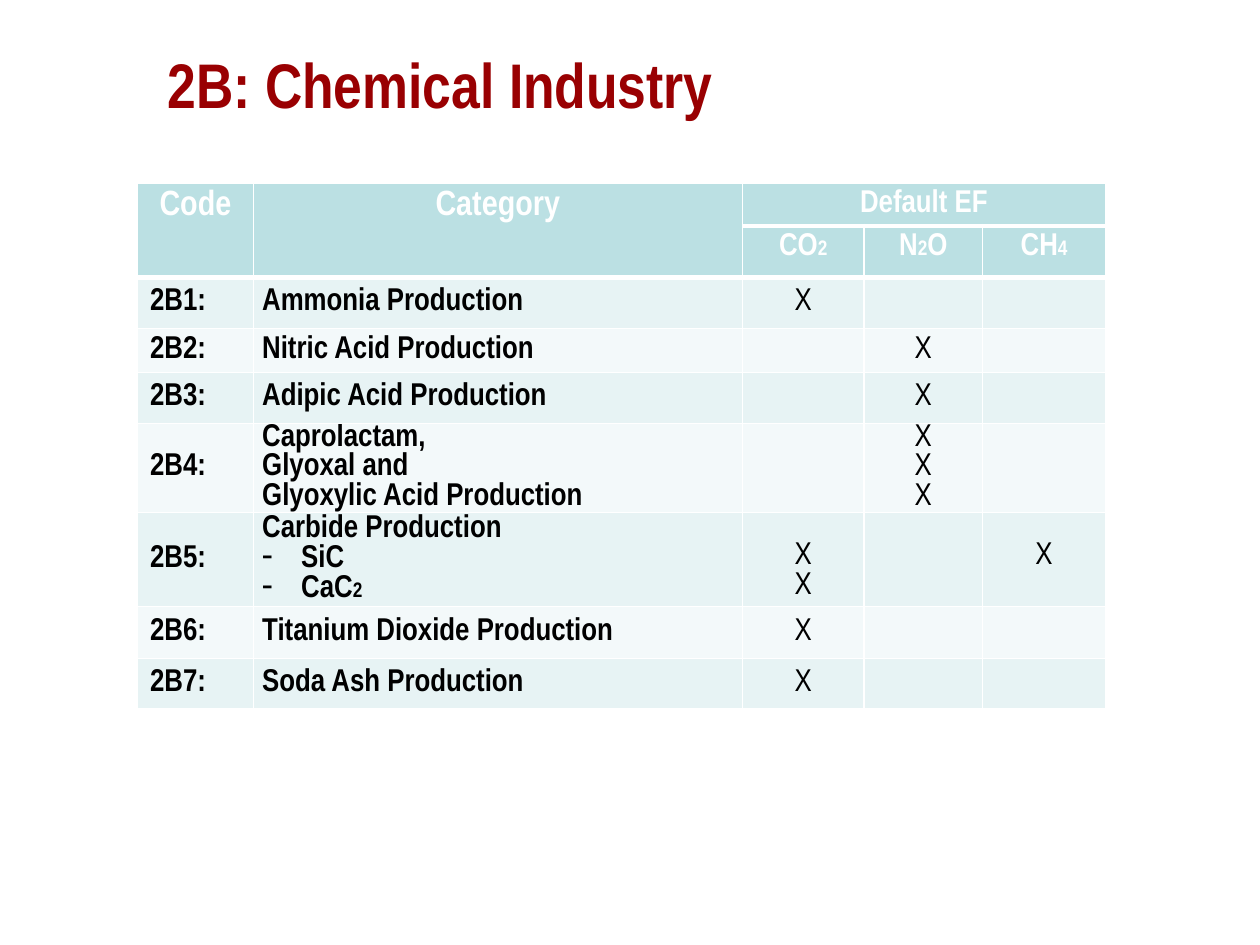
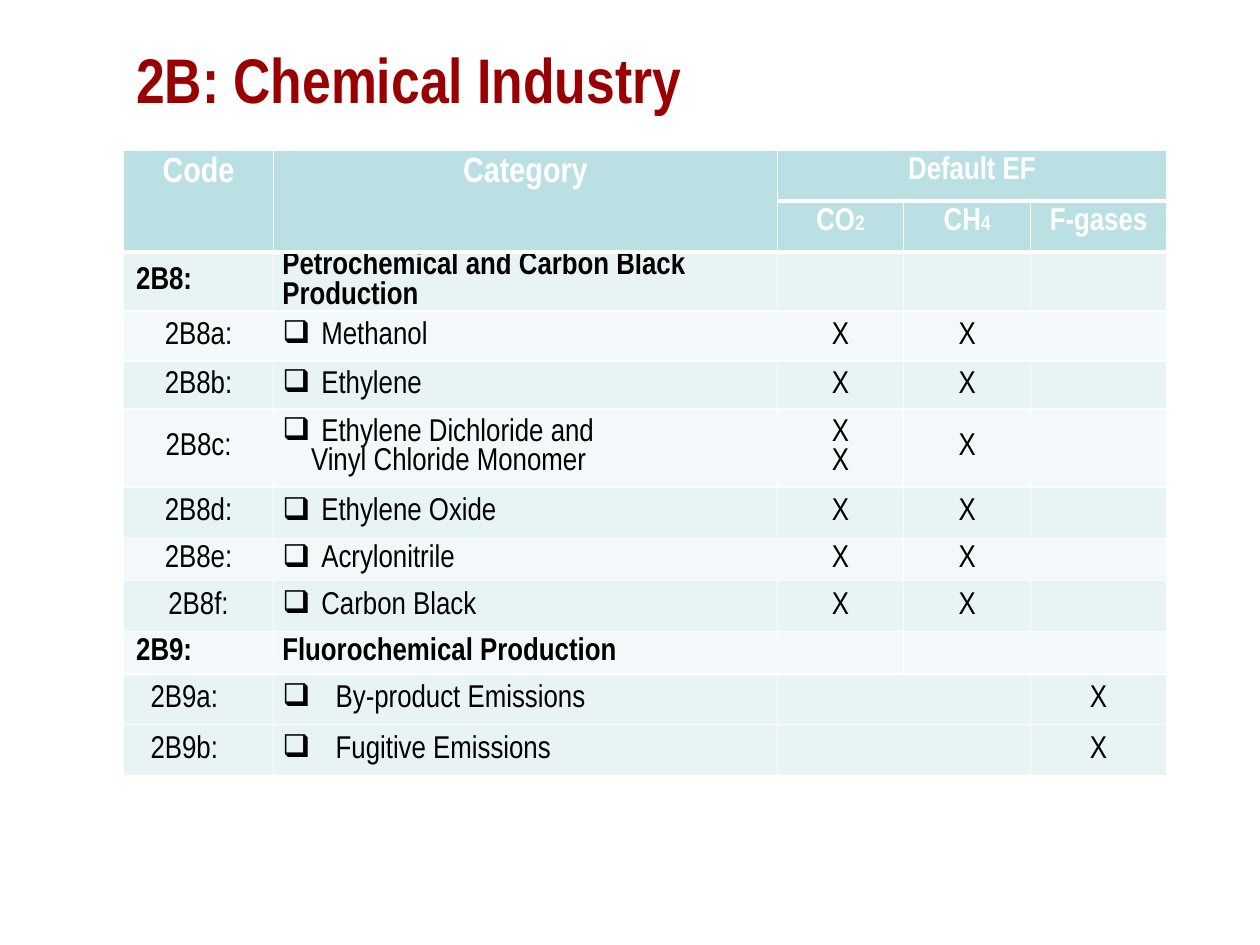
from dataclasses import dataclass

from lxml import etree
from pptx import Presentation
from pptx.dml.color import RGBColor
from pptx.enum.text import MSO_ANCHOR, PP_ALIGN
from pptx.oxml.ns import qn
from pptx.util import Pt

LEFT, CENTER = PP_ALIGN.LEFT, PP_ALIGN.CENTER
TOP, MIDDLE = MSO_ANCHOR.TOP, MSO_ANCHOR.MIDDLE

FONT = "Arial Narrow"
DARK_RED = RGBColor(0x99, 0x00, 0x02)
WHITE = RGBColor(0xFF, 0xFF, 0xFF)
BLACK = RGBColor(0x00, 0x00, 0x00)
HEADER_FILL = RGBColor(0xBB, 0xE0, 0xE3)
BAND_FILL = RGBColor(0xE7, 0xF3, 0xF4)
PALE_FILL = RGBColor(0xF3, 0xF9, 0xFA)

TITLE = "2B: Chemical Industry"
HEADER_ROWS = 2
FIRST_GAS = 2
THIN, THICK = 1, 3
WIDE_INSET = (7.2, 3.6)
TIGHT_INSET = (5.04, 0)
HANG = 22.3
DEEP_HANG = 30.5


@dataclass
class Line:
    """One line of a cell; an underscore sets the next character small."""
    text: str
    bullet: str = ""
    indent: float = 0


@dataclass
class Row:
    """A source category and its number of marks for each gas."""
    height: float
    code: str
    lines: list
    marks: tuple = (0, 0, 0)
    bold: bool = True
    code_align: PP_ALIGN = LEFT
    code_indent: float = 0
    marks_top: float = 0
    merge_gases: bool = False


def boxed(text, indent=HANG):
    return Line(text, "❑", indent)


def sub_row(height, code, lines, marks=(1, 1, 0)):
    return Row(height, code, lines, marks, bold=False, code_align=CENTER)


def fluoro_row(code, text):
    return Row(29.1, code, [boxed(text, DEEP_HANG)], (0, 0, 1), bold=False,
               code_indent=8.2, merge_gases=True)


INDUSTRY_ROWS = [
    Row(29.1, "2B1:", [Line("Ammonia Production")], (1, 0, 0)),
    Row(25.2, "2B2:", [Line("Nitric Acid Production")], (0, 1, 0)),
    Row(29.1, "2B3:", [Line("Adipic Acid Production")], (0, 1, 0)),
    Row(50.9, "2B4:", [Line("Caprolactam,"), Line("Glyoxal and"),
                       Line("Glyoxylic Acid Production")], (0, 3, 0)),
    Row(53.9, "2B5:", [Line("Carbide Production"), Line("SiC", "-", HANG),
                       Line("CaC_2", "-", HANG)], (2, 0, 1), marks_top=16.8),
    Row(29.5, "2B6:", [Line("Titanium Dioxide Production")], (1, 0, 0)),
    Row(29.1, "2B7:", [Line("Soda Ash Production")], (1, 0, 0)),
]

PETROCHEMICAL_ROWS = [
    Row(33.7, "2B8:", [Line("Petrochemical and Carbon Black Production")]),
    sub_row(28.6, "2B8a:", [boxed("Methanol")]),
    sub_row(27.2, "2B8b:", [boxed("Ethylene")]),
    sub_row(44.6, "2B8c:", [boxed("Ethylene Dichloride and"),
                            Line("Vinyl Chloride Monomer", indent=16.4)],
            (2, 1, 0)),
    sub_row(29.5, "2B8d:", [boxed("Ethylene Oxide")]),
    sub_row(24.1, "2B8e:", [boxed("Acrylonitrile")]),
    sub_row(29.1, "2B8f:", [boxed("Carbon Black")]),
    Row(24.1, "2B9:", [Line("Fluorochemical Production")]),
    fluoro_row("2B9a:", "By-product Emissions"),
    fluoro_row("2B9b:", "Fugitive Emissions"),
]


def add_run(p, text, size, color, bold):
    r = p.add_run()
    r.text = text
    r.font.name = FONT
    r.font.size = Pt(size)
    r.font.bold = bold
    r.font.color.rgb = color


def write_line(p, line, size, color, bold, align):
    pPr = p._p.get_or_add_pPr()
    if line.indent:
        pPr.set("marL", str(Pt(line.indent)))
    if line.bullet:
        pPr.set("indent", str(-Pt(line.indent)))
        etree.SubElement(pPr, qn("a:buChar"), char=line.bullet)
    p.alignment = align
    first, *rest = line.text.split("_")
    add_run(p, first, size, color, bold)
    for part in rest:
        add_run(p, part[0], 12, color, bold)
        if part[1:]:
            add_run(p, part[1:], size, color, bold)


def write_cell(cell, lines, inset, size=18, color=BLACK, bold=False,
               align=LEFT, anchor=MIDDLE):
    cell.margin_left = cell.margin_right = Pt(inset[0])
    cell.margin_top = cell.margin_bottom = Pt(inset[1])
    cell.vertical_anchor = anchor
    tf = cell.text_frame
    for i, line in enumerate(lines):
        p = tf.add_paragraph() if i else tf.paragraphs[0]
        write_line(p, line, size, color, bold, align)


def paint_cell(cell, fill, top, bottom):
    """Give a cell white edges and a flat fill."""
    tcPr = cell._tc.get_or_add_tcPr()
    for side, width in (("L", THIN), ("R", THIN), ("T", top), ("B", bottom)):
        ln = etree.SubElement(tcPr, qn("a:ln" + side), w=str(Pt(width)))
        solid = etree.SubElement(ln, qn("a:solidFill"))
        etree.SubElement(solid, qn("a:srgbClr"), val=str(WHITE))
    cell.fill.solid()
    cell.fill.fore_color.rgb = fill


def add_title(slide, left, top):
    sp = slide.shapes.title
    sp.left, sp.top, sp.width, sp.height = Pt(left), Pt(top), Pt(623.5), Pt(49)
    tf = sp.text_frame
    tf.vertical_anchor = MIDDLE
    p = tf.paragraphs[0]
    p.alignment = LEFT
    add_run(p, TITLE, 36, DARK_RED, True)


def fill_header(table, gases):
    def head(row, col, text, size=18):
        write_cell(table.cell(row, col), [Line(text)], WIDE_INSET, size,
                   WHITE, True, CENTER, TOP)

    for r in range(HEADER_ROWS):
        for c in range(FIRST_GAS + len(gases)):
            paint_cell(table.cell(r, c), HEADER_FILL,
                       THICK if r and c >= FIRST_GAS else THIN, THICK)
    for c, label in enumerate(("Code", "Category")):
        table.cell(0, c).merge(table.cell(1, c))
        head(0, c, label, 20)
    table.cell(0, FIRST_GAS).merge(table.cell(0, FIRST_GAS + len(gases) - 1))
    head(0, FIRST_GAS, "Default EF")
    for c, gas in enumerate(gases, FIRST_GAS):
        head(1, c, gas)


def fill_row(table, index, row):
    r = HEADER_ROWS + index
    fill = BAND_FILL if row.merge_gases or index % 2 == 0 else PALE_FILL
    for c in range(FIRST_GAS + len(row.marks)):
        paint_cell(table.cell(r, c), fill, THIN if index else THICK, THIN)
    write_cell(table.cell(r, 0), [Line(row.code, indent=row.code_indent)],
               WIDE_INSET, bold=row.bold, align=row.code_align)
    write_cell(table.cell(r, 1), row.lines, TIGHT_INSET, bold=row.bold)
    for c, count in enumerate(row.marks, FIRST_GAS):
        cell = table.cell(r, c)
        write_cell(cell, [Line("X")] * count, TIGHT_INSET, align=CENTER)
        if row.marks_top:
            cell.vertical_anchor = TOP
            cell.margin_top = Pt(row.marks_top)
    if row.merge_gases:
        table.cell(r, FIRST_GAS).merge(table.cell(r, FIRST_GAS + 1))


def add_emission_table(slide, left, top, widths, header_heights, gases, rows):
    heights = [*header_heights, *(row.height for row in rows)]
    table = slide.shapes.add_table(
        len(heights), len(widths), Pt(left), Pt(top),
        Pt(sum(widths)), Pt(sum(heights))).table
    table.first_row = table.horz_banding = False
    for col, width in zip(table.columns, widths):
        col.width = Pt(width)
    for table_row, height in zip(table.rows, heights):
        table_row.height = Pt(height)
    fill_header(table, gases)
    for i, row in enumerate(rows):
        fill_row(table, i, row)


def add_slide(prs, title_at, table_at, widths, header_heights, gases, rows):
    slide = prs.slides.add_slide(prs.slide_layouts[5])
    add_title(slide, *title_at)
    add_emission_table(slide, *table_at, widths, header_heights, gases, rows)


def main():
    prs = Presentation()
    prs.slide_width, prs.slide_height = Pt(720), Pt(540)
    add_slide(prs, (88.6, 23), (78.6, 104.9), (66.2, 279.4, 69.6, 67.7, 70.3),
              (24.1, 29.5), ("CO_2", "N_2O", "CH_4"), INDUSTRY_ROWS)
    add_slide(prs, (70.6, 20.2), (70.6, 86), (85.7, 288, 72, 72.7, 77.6),
              (28.9, 29.1), ("CO_2", "CH_4", "F-gases"), PETROCHEMICAL_ROWS)
    prs.save("out.pptx")


if __name__ == "__main__":
    main()
